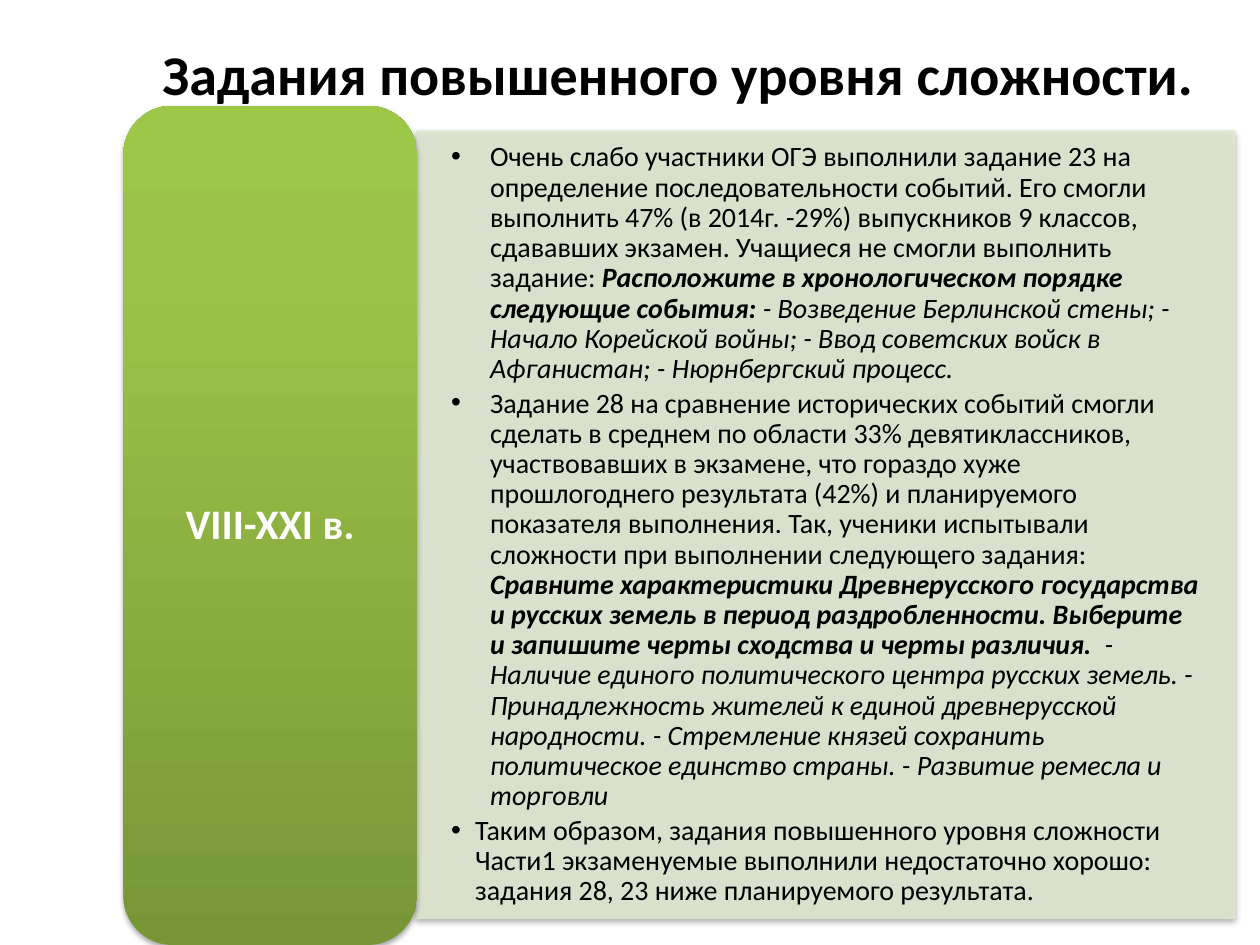
from dataclasses import dataclass

from lxml import etree
from pptx import Presentation
from pptx import util as u
from pptx.dml.color import RGBColor
from pptx.enum import shapes, text
from pptx.oxml import parse_xml
from pptx.oxml.ns import nsdecls, qn


@dataclass(frozen=True)
class Theme:
    font: str = "Calibri"
    dark: str = "000000"
    light: str = "FFFFFF"
    panel: str = "DEE7D1"
    panel_alpha: int = 90
    label_stops: tuple = ((0, "779737"), (80, "9BC348"), (100, "9DC746"))
    title_size: int = 32
    label_size: int = 24
    body_size: int = 16


THEME = Theme()
PLAIN, ITALIC, BOLD_ITALIC = (False, False), (False, True), (True, True)

TITLE = "Задания повышенного уровня сложности."
PERIOD = "VIII-XXI в."
# Each finding: hanging indent in inches, then (text, (bold, italic)) runs
FINDINGS = [
    (0.31, [
        ("Очень слабо участники ОГЭ выполнили задание 23 на определение "
         "последовательности событий. Его смогли выполнить 47% (в 2014г. -29%) "
         "выпускников 9 классов, сдававших экзамен. Учащиеся не смогли "
         "выполнить задание: ", PLAIN),
        ("Расположите в хронологическом порядке следующие события: ", BOLD_ITALIC),
        ("- Возведение Берлинской стены; - Начало Корейской войны; - Ввод "
         "советских войск в Афганистан; - Нюрнбергский процесс.", ITALIC),
    ]),
    (0.31, [
        ("Задание 28 на сравнение исторических событий смогли сделать в среднем "
         "по области 33% девятиклассников, участвовавших в экзамене, что гораздо "
         "хуже прошлогоднего результата (42%) и планируемого показателя "
         "выполнения. Так, ученики испытывали сложности при выполнении "
         "следующего задания: ", PLAIN),
        ("Сравните характеристики Древнерусского государства и русских земель "
         "в период раздробленности. Выберите и запишите черты сходства и черты "
         "различия. ", BOLD_ITALIC),
        (" - Наличие единого политического центра русских земель. - "
         "Принадлежность жителей к единой древнерусской народности. - Стремление "
         "князей сохранить политическое единство страны. - Развитие ремесла и "
         "торговли", ITALIC),
    ]),
    (0.19, [
        ("Таким образом, задания повышенного уровня сложности Части1 "
         "экзаменуемые выполнили недостаточно хорошо: задания 28, 23 ниже "
         "планируемого результата.", PLAIN),
    ]),
]


def inches(*lengths):
    return [u.Inches(length) for length in lengths]


def set_font(paragraph, size, color, bold=None):
    font = paragraph.font
    font.name, font.size, font.bold = THEME.font, u.Pt(size), bold
    font.color.rgb = RGBColor.from_string(color)


def set_frame(frame, horizontal, vertical):
    frame.word_wrap = True
    frame.vertical_anchor = text.MSO_ANCHOR.MIDDLE
    frame.margin_left = frame.margin_right = u.Inches(horizontal)
    frame.margin_top = frame.margin_bottom = u.Inches(vertical)


def add_soft_shadow(shape):
    shape.shadow.inherit = False
    effects = shape._element.spPr.find(qn("a:effectLst"))
    effects.append(parse_xml(
        f'<a:outerShdw {nsdecls("a")} blurRad="{u.Pt(3.1)}" dist="{u.Pt(1.8)}" '
        'dir="5400000" rotWithShape="0"><a:srgbClr val="000000">'
        '<a:alpha val="35000"/></a:srgbClr></a:outerShdw>'))


def set_translucent(color_format, color):
    color_format.rgb = RGBColor.from_string(color)
    element = color_format._color._xClr
    etree.SubElement(element, qn("a:alpha"), val=str(THEME.panel_alpha * 1000))


def set_gradient(fill, stops):
    """Fill from bottom to top with (percent, colour) stops."""
    fill.gradient()
    fill.gradient_angle = 90
    stop_list = fill._fill._gradFill.find(qn("a:gsLst"))
    for stop in list(stop_list):
        stop_list.remove(stop)
    for percent, color in stops:
        stop = etree.SubElement(stop_list, qn("a:gs"), pos=str(percent * 1000))
        etree.SubElement(stop, qn("a:srgbClr"), val=color)


def add_bullet(paragraph, indent):
    properties = paragraph._p.get_or_add_pPr()
    properties.set("marL", str(u.Inches(indent)))
    properties.set("indent", str(-u.Inches(indent)))
    etree.SubElement(properties, qn("a:buFont"), typeface="Arial")
    etree.SubElement(properties, qn("a:buChar"), char="•")


def add_title(slide, box):
    frame = slide.shapes.add_textbox(*inches(*box)).text_frame
    set_frame(frame, 0.1, 0.05)
    paragraph = frame.paragraphs[0]
    paragraph.text = TITLE
    set_font(paragraph, THEME.title_size, THEME.dark, bold=True)


def add_findings_panel(slide, box):
    panel = slide.shapes.add_shape(shapes.MSO_SHAPE.RECTANGLE, *inches(*box))
    panel.fill.solid()
    set_translucent(panel.fill.fore_color, THEME.panel)
    panel.line.width = u.Pt(0.75)
    panel.line.fill.solid()
    set_translucent(panel.line.fill.fore_color, THEME.panel)
    add_soft_shadow(panel)

    frame = panel.text_frame
    set_frame(frame, 0.27, 0.14)
    for index, (indent, runs) in enumerate(FINDINGS):
        paragraph = frame.add_paragraph() if index else frame.paragraphs[0]
        paragraph.alignment = text.PP_ALIGN.LEFT
        paragraph.line_spacing = 0.9
        paragraph.space_after = u.Pt(2.5)
        add_bullet(paragraph, indent)
        set_font(paragraph, THEME.body_size, THEME.dark)
        for words, (bold, italic) in runs:
            run = paragraph.add_run()
            run.text = words
            run.font.bold, run.font.italic = bold, italic


def add_period_label(slide, box):
    label = slide.shapes.add_shape(shapes.MSO_SHAPE.ROUNDED_RECTANGLE, *inches(*box))
    set_gradient(label.fill, THEME.label_stops)
    label.line.fill.background()
    add_soft_shadow(label)
    set_frame(label.text_frame, 0, 0)
    paragraph = label.text_frame.paragraphs[0]
    paragraph.text = PERIOD
    paragraph.alignment = text.PP_ALIGN.CENTER
    paragraph.line_spacing = 0.9
    set_font(paragraph, THEME.label_size, THEME.light, bold=True)


def main():
    presentation = Presentation()
    presentation.slide_width, presentation.slide_height = inches(10, 7.5)
    slide = presentation.slides.add_slide(presentation.slide_layouts[6])
    add_findings_panel(slide, (3.31, 1.04, 6.49, 6.25))
    add_period_label(slide, (0.98, 0.84, 2.33, 6.66))
    add_title(slide, (1.19, 0.13, 8.83, 0.9))
    presentation.save("out.pptx")


if __name__ == "__main__":
    main()
